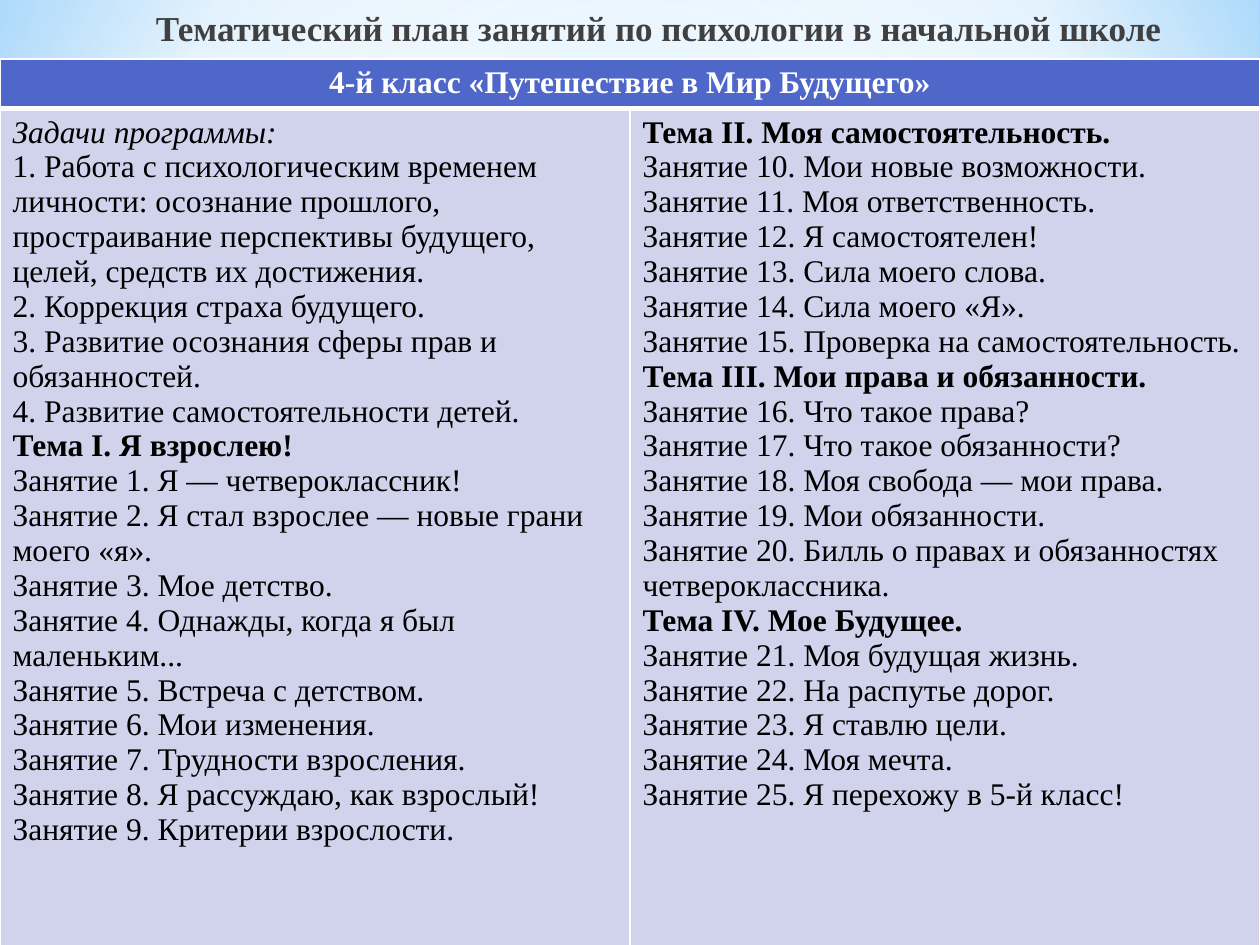
from dataclasses import dataclass
from itertools import count
from typing import NamedTuple

from lxml.etree import SubElement
from pptx import Presentation
from pptx.dml.color import RGBColor
from pptx.enum.shapes import MSO_SHAPE
from pptx.enum.text import MSO_ANCHOR, MSO_AUTO_SIZE, PP_ALIGN
from pptx.oxml.ns import qn
from pptx.util import Cm, Pt

FONT = "Times New Roman"
WHITE = "FFFFFF"


class Stop(NamedTuple):
    pos: int
    color: str
    alpha: int = 100


class Line(NamedTuple):
    text: str
    bold: bool = False
    italic: bool = False


class Topic(NamedTuple):
    title: str
    lessons: tuple[str, ...]


@dataclass
class CellStyle:
    fill: str
    color: str
    align: PP_ALIGN
    top: float = 1
    bottom: float = 1


HEADER = CellStyle("4E67C8", WHITE, PP_ALIGN.CENTER, bottom=3)
BODY = CellStyle("D0D3EB", "000000", PP_ALIGN.LEFT, top=3)

TASKS = (
    "Работа с психологическим временем личности: осознание прошлого, "
    "простраивание перспективы будущего, целей, средств их достижения.",
    "Коррекция страха будущего.",
    "Развитие осознания сферы прав и обязанностей.",
    "Развитие самостоятельности детей.",
)
TOPICS = (
    Topic("Тема I. Я взрослею!", (
        "Я — четвероклассник!",
        "Я стал взрослее — новые грани моего «я».",
        "Мое детство.",
        "Однажды, когда я был маленьким...",
        "Встреча с детством.",
        "Мои изменения.",
        "Трудности взросления.",
        "Я рассуждаю, как взрослый!",
        "Критерии взрослости.",
    )),
    Topic("Тема II. Моя самостоятельность.", (
        "Мои новые возможности.",
        "Моя ответственность.",
        "Я самостоятелен!",
        "Сила моего слова.",
        "Сила моего «Я».",
        "Проверка на самостоятельность.",
    )),
    Topic("Тема III. Мои права и обязанности.", (
        "Что такое права?",
        "Что такое обязанности?",
        "Моя свобода — мои права.",
        "Мои обязанности.",
        "Билль о правах и обязанностях четвероклассника.",
    )),
    Topic("Тема IV. Мое Будущее.", (
        "Моя будущая жизнь.",
        "На распутье дорог.",
        "Я ставлю цели.",
        "Моя мечта.",
        "Я перехожу в 5-й класс!",
    )),
)


def rgb(color: str) -> RGBColor:
    return RGBColor.from_string(color)


def write(p, text: str, *, size=18, color="000000", bold=False, italic=False, align=PP_ALIGN.LEFT):
    p.alignment = align
    r = p.add_run()
    r.text = text
    f = r.font
    f.name, f.size, f.bold, f.italic = FONT, Pt(size), bold, italic
    f.color.rgb = rgb(color)


def circle_gradient(fill, element, stops: tuple[Stop, ...], focus: tuple[int, ...]) -> None:
    fill.solid()
    solid = next(element.iter(qn("a:solidFill")))
    grad = solid.makeelement(qn("a:gradFill"), {"rotWithShape": "1"})
    solid.getparent().replace(solid, grad)
    gs_lst = SubElement(grad, qn("a:gsLst"))
    for stop in stops:
        gs = SubElement(gs_lst, qn("a:gs"), pos=str(stop.pos * 1000))
        clr = SubElement(gs, qn("a:srgbClr"), val=stop.color)
        if stop.alpha < 100:
            SubElement(clr, qn("a:alpha"), val=str(stop.alpha * 1000))
    path = SubElement(grad, qn("a:path"), {"path": "circle"})
    SubElement(path, qn("a:fillToRect"), {k: str(v * 1000) for k, v in zip("ltrb", focus)})


def fill_cell(cell, lines: list[Line], style: CellStyle) -> None:
    cell.fill.solid()
    cell.fill.fore_color.rgb = rgb(style.fill)
    tc_pr = cell._tc.get_or_add_tcPr()
    borders = (("L", 1), ("R", 1), ("T", style.top), ("B", style.bottom))
    for i, (side, width) in enumerate(borders):
        ln = tc_pr.makeelement(qn(f"a:ln{side}"), {"w": str(Pt(width))})
        SubElement(SubElement(ln, qn("a:solidFill")), qn("a:srgbClr"), val=WHITE)
        tc_pr.insert(i, ln)
    tf = cell.text_frame
    for i, line in enumerate(lines):
        p = tf.add_paragraph() if i else tf.paragraphs[0]
        write(p, line.text, color=style.color, bold=line.bold, italic=line.italic, align=style.align)


def topic_lines(topics: tuple[Topic, ...], numbers: count) -> list[Line]:
    lines = []
    for topic in topics:
        lines.append(Line(topic.title, bold=True))
        lines += [Line(f"Занятие {next(numbers)}. {name}") for name in topic.lessons]
    return lines


def add_backdrop(s, width: int) -> None:
    circle_gradient(s.background.fill, s._element,
                    (Stop(0, "9ED5FF"), Stop(60, WHITE), Stop(100, "5BB9FF")), (20, 10, 20, 60))
    sp = s.shapes.add_shape(MSO_SHAPE.RECTANGLE, 0, 0, width, Cm(14.17))
    sp.shadow.inherit = False
    sp.line.fill.background()
    circle_gradient(sp.fill, sp._element.spPr,
                    (Stop(0, WHITE, 89), Stop(48, WHITE, 62), Stop(100, "B4DCFA", 79)), (50, 50, 50, 50))
    s.shapes._spTree.insert(2, sp._element)


def add_heading(s, text: str) -> None:
    title = s.shapes.title._element
    title.getparent().remove(title)
    body = s.placeholders[1]
    body.left, body.top, body.width, body.height = Cm(0.71), Cm(0), Cm(24), Cm(19.05)
    tf = body.text_frame
    tf.word_wrap = True
    tf.auto_size = MSO_AUTO_SIZE.NONE
    tf.vertical_anchor = MSO_ANCHOR.TOP
    p = tf.paragraphs[0]
    write(p, text, size=20, color="404040", bold=True, align=PP_ALIGN.CENTER)
    p.space_before, p.space_after = Pt(4), Pt(3)
    p_pr = p._p.get_or_add_pPr()
    p_pr.set("marL", str(Cm(0.64)))
    p_pr.set("indent", str(Cm(0.5)))
    SubElement(p_pr, qn("a:buNone"))


def add_plan(s, width: int) -> None:
    heights = Cm(1), Cm(16.87)
    table = s.shapes.add_table(2, 2, 0, Cm(1.19), width, sum(heights)).table
    for row, height in zip(table.rows, heights):
        row.height = height
    table.cell(0, 0).merge(table.cell(0, 1))
    fill_cell(table.cell(0, 0), [Line("4-й класс «Путешествие в Мир Будущего»", bold=True)], HEADER)
    numbers = count(1)
    tasks = [Line("Задачи программы:", italic=True)]
    tasks += [Line(f"{n}. {task}") for n, task in enumerate(TASKS, 1)]
    fill_cell(table.cell(1, 0), tasks + topic_lines(TOPICS[:1], numbers), BODY)
    fill_cell(table.cell(1, 1), topic_lines(TOPICS[1:], numbers), BODY)


def main() -> None:
    prs = Presentation()
    prs.slide_width, prs.slide_height = Cm(25.4), Cm(19.05)
    s = prs.slides.add_slide(prs.slide_layouts[1])
    add_backdrop(s, prs.slide_width)
    add_heading(s, "Тематический план занятий по психологии в начальной школе")
    add_plan(s, prs.slide_width)
    prs.save("out.pptx")


if __name__ == "__main__":
    main()
